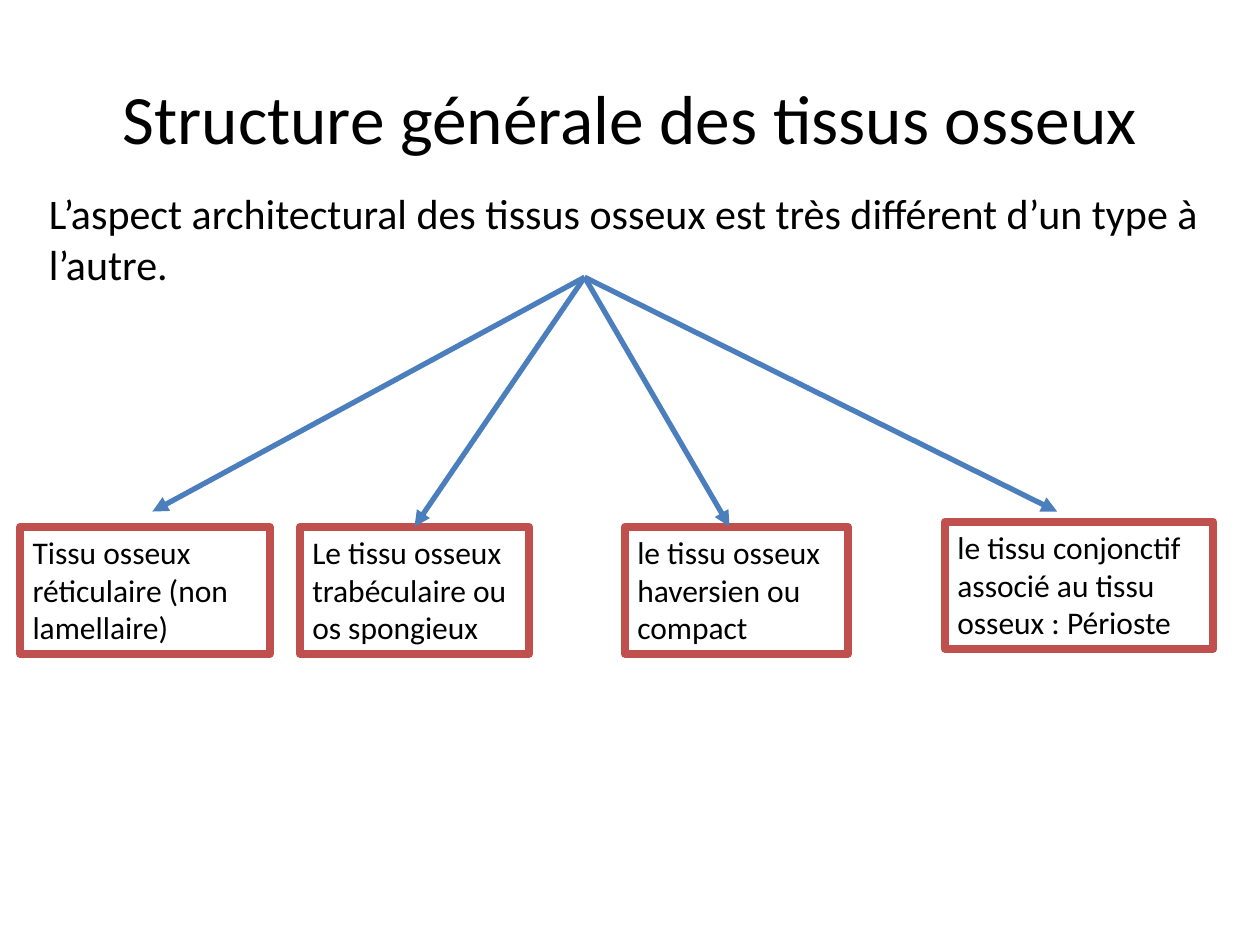
from lxml import etree
from pptx import Presentation
from pptx.dml.color import RGBColor
from pptx.enum.shapes import MSO_CONNECTOR, MSO_SHAPE
from pptx.enum.text import MSO_ANCHOR, PP_ALIGN
from pptx.oxml.ns import qn
from pptx.util import Inches, Pt

RECTANGLE = MSO_SHAPE.RECTANGLE
STRAIGHT = MSO_CONNECTOR.STRAIGHT
TOP, MIDDLE = MSO_ANCHOR.TOP, MSO_ANCHOR.MIDDLE
LEFT, CENTER = PP_ALIGN.LEFT, PP_ALIGN.CENTER


def color(hex_value):
    return RGBColor.from_string(hex_value)


class SlideBuilder:
    font = "Calibri"
    text_color = "000000"
    box_fill = "FFFFFF"
    box_border = "C0504D"
    arrow_color = "4B7EBC"

    def __init__(self, slide):
        self.slide = slide

    def set_text(self, shape, text, size, align=LEFT, anchor=TOP):
        """Fill a shape with one wrapped paragraph."""
        frame = shape.text_frame
        frame.word_wrap = True
        frame.vertical_anchor = anchor
        paragraph = frame.paragraphs[0]
        paragraph.alignment = align
        run = paragraph.add_run()
        run.text = text
        run.font.name = self.font
        run.font.size = Pt(size)
        run.font.color.rgb = color(self.text_color)

    def text(self, left, top, width, height, text, size, align=LEFT, anchor=TOP):
        shape = self.slide.shapes.add_textbox(
            Inches(left), Inches(top), Inches(width), Inches(height))
        self.set_text(shape, text, size, align, anchor)

    def box(self, left, top, width, height, text):
        shape = self.slide.shapes.add_shape(
            RECTANGLE, Inches(left), Inches(top), Inches(width), Inches(height))
        shape.shadow.inherit = False
        shape.fill.solid()
        shape.fill.fore_color.rgb = color(self.box_fill)
        shape.line.color.rgb = color(self.box_border)
        shape.line.width = Pt(4.5)
        self.set_text(shape, text, 18)

    def arrow(self, start, end):
        connector = self.slide.shapes.add_connector(
            STRAIGHT, *(Inches(length) for length in (*start, *end)))
        connector.line.color.rgb = color(self.arrow_color)
        connector.line.width = Pt(3)
        properties = connector._element.spPr
        etree.SubElement(properties.find(qn("a:ln")), qn("a:tailEnd"), type="triangle")
        etree.SubElement(properties, qn("a:effectLst"))


def main():
    presentation = Presentation()
    presentation.slide_width = Inches(10)
    presentation.slide_height = Inches(7.5)
    slide = presentation.slides.add_slide(presentation.slide_layouts[6])
    builder = SlideBuilder(slide)

    builder.text(0.5, 0.3, 9, 1.25, "Structure générale des tissus osseux",
                 39.6, CENTER, MIDDLE)

    # Box left, top and width, arrow tip, wording
    tissues = [
        (0.16, 4.18, 1.98, (1.21, 4.06), "Tissu osseux réticulaire (non lamellaire)"),
        (2.38, 4.18, 1.82, (3.29, 4.18), "Le tissu osseux trabéculaire ou os spongieux"),
        (4.96, 4.18, 1.77, (5.79, 4.18), "le tissu osseux haversien ou compact"),
        (7.5, 4.14, 2.13, (8.39, 4.06),
         "le tissu conjonctif associé au tissu osseux : Périoste"),
    ]
    for left, top, width, _, wording in tissues:
        builder.box(left, top, width, 1.01, wording)
    for _, _, _, tip, _ in tissues:
        builder.arrow((4.64, 2.2), tip)

    builder.text(0.29, 1.44, 9.41, 0.91,
                 "L’aspect architectural des tissus osseux est très différent "
                 "d’un type à l’autre.", 24)

    presentation.save("out.pptx")


if __name__ == "__main__":
    main()
